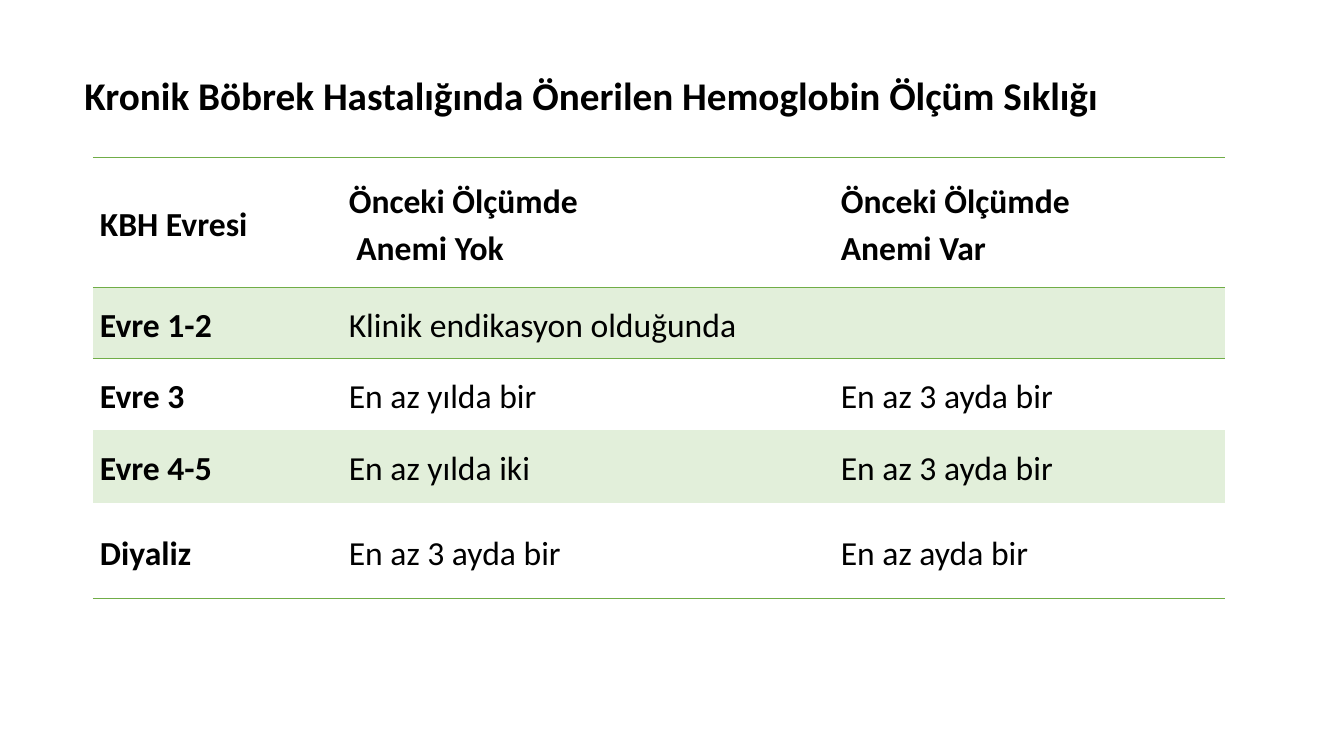
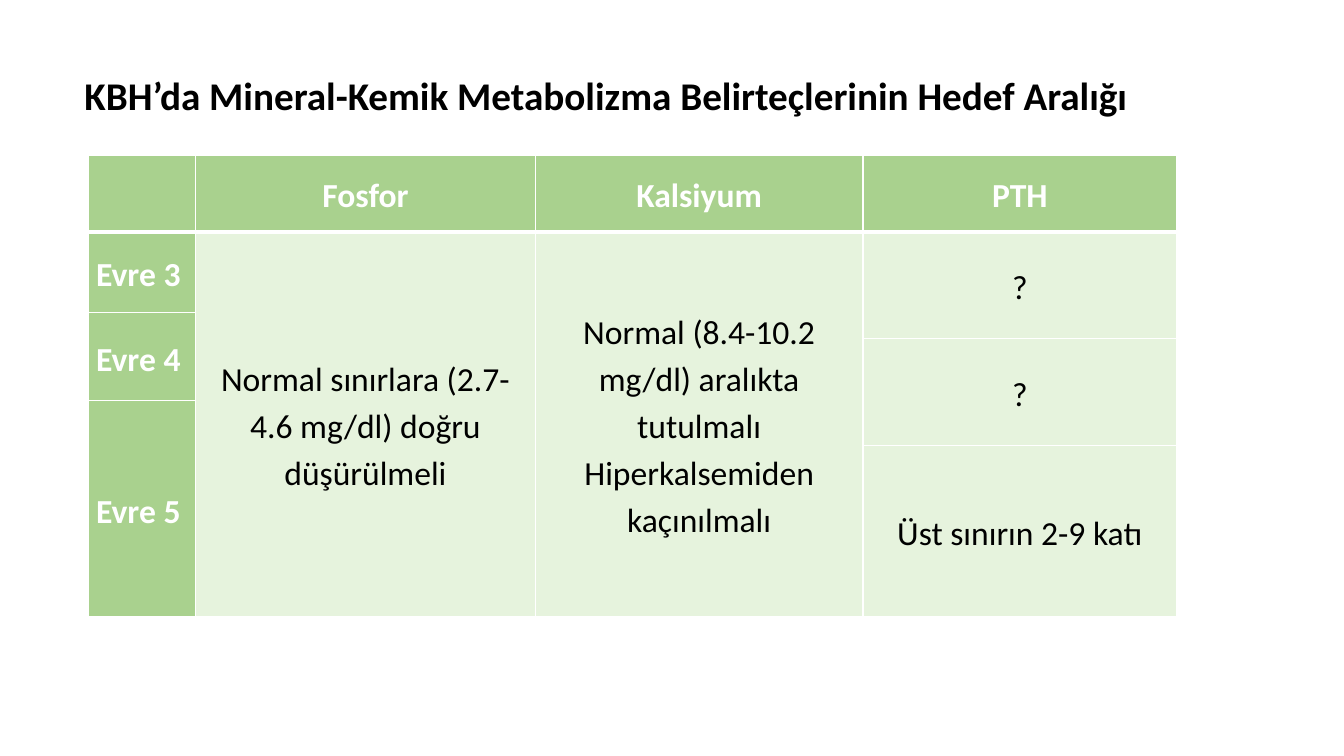
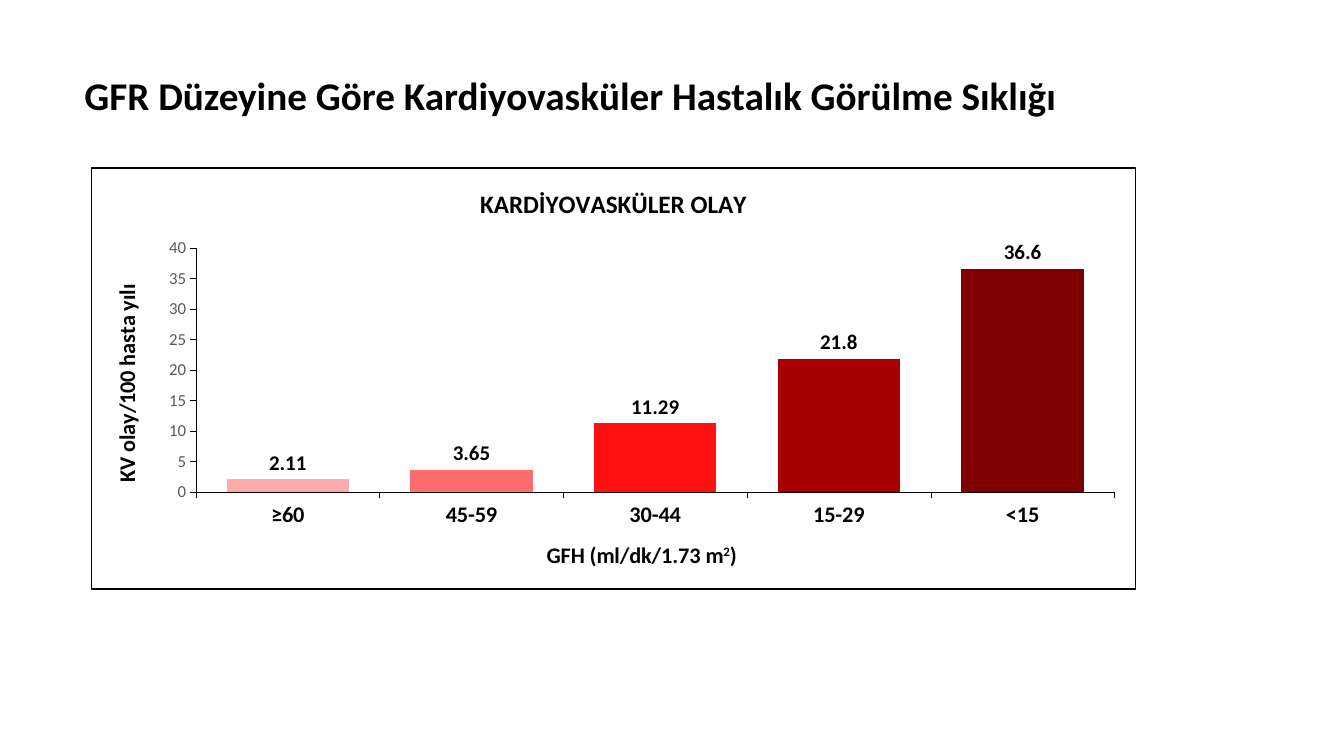
from dataclasses import dataclass
from typing import Any

import pptx
import pptx.chart.data
import pptx.dml.color
import pptx.enum.chart
import pptx.enum.text
import pptx.oxml
import pptx.oxml.ns
import pptx.util
from pptx.util import Cm, Pt

FONT = "Calibri"
COLOURS = {
    "black": "000000",
    "white": "FFFFFF",
    "grey": "595959",
    "line green": "70AD47",
    "band green": "E2EFDA",
    "header green": "A9D18E",
    "body green": "E6F3DD",
}
BAR_COLOURS = ("FFABAB", "FF6D6D", "FF1111", "A80000", "7E0000")
PLAIN_TABLE_STYLE = "{2D5ABB26-0587-4C30-8999-92F81FD0307C}"
CELL_FORMAT = {
    "margin_left": Cm(0.18),
    "margin_right": Cm(0.18),
    "margin_top": 0,
    "margin_bottom": 0,
    "vertical_anchor": pptx.enum.text.MSO_ANCHOR.MIDDLE,
}
ALIGN = pptx.enum.text.PP_ALIGN
Borders = dict[str, tuple[str, float]]


@dataclass(frozen=True)
class Look:
    fill: str | None = None
    colour: str = "black"
    bold: bool = False
    align: Any = ALIGN.JUSTIFY


@dataclass(frozen=True)
class Entry:
    """A table cell; a line break in the text starts a new paragraph."""
    row: int
    column: int
    text: str
    look: Look
    row_span: int = 1


def rgb(name: str) -> pptx.dml.color.RGBColor:
    return pptx.dml.color.RGBColor.from_string(COLOURS.get(name, name))


def set_values(target: Any, values: dict[str, Any]) -> None:
    for name, value in values.items():
        setattr(target, name, value)


def set_font(font: Any, size: float, bold: bool = True, colour: str = "black") -> None:
    set_values(font, {"name": FONT, "size": Pt(size), "bold": bold})
    font.color.rgb = rgb(colour)


def add_titled_page(deck: Any, title: str) -> Any:
    page = deck.slides.add_slide(deck.slide_layouts[6])
    box = page.shapes.add_textbox(Cm(1.88), Cm(1.67), Cm(28), Cm(1.45))
    set_values(box.text_frame, {
        "word_wrap": True,
        "auto_size": pptx.enum.text.MSO_AUTO_SIZE.SHAPE_TO_FIT_TEXT,
    })
    span = box.text_frame.paragraphs[0].add_run()
    span.text = title
    set_font(span.font, 28)
    return page


def add_plain_table(page: Any, left: float, top: float,
                    widths: list[float], heights: list[float]) -> Any:
    """Add a table without style, its lengths given in centimetres."""
    table = page.shapes.add_table(len(heights), len(widths), Cm(left), Cm(top),
                                  Cm(sum(widths)), Cm(sum(heights))).table
    properties = table._tbl.tblPr
    properties.find(pptx.oxml.ns.qn("a:tableStyleId")).text = PLAIN_TABLE_STYLE
    set_values(table, {"first_row": False, "horz_banding": False})
    for column, width in zip(table.columns, widths):
        column.width = Cm(width)
    for row, height in zip(table.rows, heights):
        row.height = Cm(height)
    for cell in table.iter_cells():
        set_values(cell, CELL_FORMAT)
    return table


def set_borders(cell: Any, borders: Borders) -> None:
    """Draw cell sides, keyed L, R, T and B, ahead of the fill."""
    properties = cell._tc.get_or_add_tcPr()
    sides = [side for side in "LRTB" if side in borders]
    for index, side in enumerate(sides):
        colour, width = borders[side]
        properties.insert(index, pptx.oxml.parse_xml(
            f'<a:ln{side} {pptx.oxml.ns.nsdecls("a")} w="{Pt(width)}"><a:solidFill>'
            f'<a:srgbClr val="{COLOURS[colour]}"/></a:solidFill></a:ln{side}>'))


def fill_cell(table: Any, entry: Entry, borders: Borders) -> None:
    cell = table.cell(entry.row, entry.column)
    look = entry.look
    if entry.row_span > 1:
        cell.merge(table.cell(entry.row + entry.row_span - 1, entry.column))
    if look.fill:
        cell.fill.solid()
        cell.fill.fore_color.rgb = rgb(look.fill)
    else:
        cell.fill.background()
    set_borders(cell, borders)
    if not entry.text:
        return
    for index, line in enumerate(entry.text.split("\n")):
        frame = cell.text_frame
        para = frame.add_paragraph() if index else frame.paragraphs[0]
        set_values(para, {"alignment": look.align, "line_spacing": 1.15})
        span = para.add_run()
        span.text = line
        set_font(span.font, 24, look.bold, look.colour)


def build_hemoglobin_page(deck: Any) -> None:
    page = add_titled_page(deck, "Kronik Böbrek Hastalığında Önerilen Hemoglobin Ölçüm Sıklığı")
    rows = (
        ("KBH Evresi", "Önceki Ölçümde\n Anemi Yok", "Önceki Ölçümde \nAnemi Var"),
        ("Evre 1-2", "Klinik endikasyon olduğunda", ""),
        ("Evre 3", "En az yılda bir", "En az 3 ayda bir"),
        ("Evre 4-5", "En az yılda iki", "En az 3 ayda bir"),
        ("Diyaliz", "En az 3 ayda bir", "En az ayda bir"),
    )
    table = add_plain_table(page, 2.34, 3.96, [6.27, 12.4, 9.86],
                            [3.28, 1.8, 1.8, 1.83, 2.41])
    line = ("line green", 1)
    row_borders = {0: {"T": line, "B": line}, 1: {"T": line}, 4: {"B": line}}
    for row, texts in enumerate(rows):
        for column, text in enumerate(texts):
            look = Look(fill="band green" if row % 2 else None,
                        bold=row == 0 or column == 0)
            fill_cell(table, Entry(row, column, text, look), row_borders.get(row, {}))


def build_mineral_page(deck: Any) -> None:
    page = add_titled_page(deck, "KBH’da Mineral-Kemik Metabolizma Belirteçlerinin Hedef Aralığı")
    header = Look("header green", "white", True, ALIGN.CENTER)
    stage = Look("header green", "white", True, ALIGN.LEFT)
    body = Look("body green", align=ALIGN.CENTER)
    entries = [Entry(0, column, text, header)
               for column, text in enumerate(("", "Fosfor", "Kalsiyum", "PTH"))]
    entries += [
        Entry(1, 0, "Evre 3", stage),
        Entry(2, 0, "Evre 4", stage, 2),
        Entry(4, 0, "Evre 5", stage, 2),
        Entry(1, 1, "Normal sınırlara (2.7-4.6 mg/dl) doğru düşürülmeli", body, 5),
        Entry(1, 2, "Normal (8.4-10.2 mg/dl) aralıkta tutulmalı\n"
                    "Hiperkalsemiden kaçınılmalı", body, 5),
        Entry(1, 3, "?", body, 2),
        Entry(3, 3, "?", body, 2),
        Entry(5, 3, "Üst sınırın 2-9 katı", body),
    ]
    table = add_plain_table(page, 2.24, 3.91, [2.69, 8.56, 8.26, 7.9],
                            [1.93, 2.03, 0.66, 1.57, 1.12, 4.32])
    thin, thick = ("white", 1), ("white", 3)
    for entry in entries:
        fill_cell(table, entry, {
            "L": thin, "R": thin,
            "T": thick if entry.row == 1 else thin,
            "B": thick if entry.row == 0 else thin,
        })


def set_title(owner: Any, text: str, size: float, superscript: str = "", ending: str = "") -> None:
    """Title a chart or an axis, with an optional raised part before the ending."""
    title = owner.chart_title if hasattr(owner, "chart_title") else owner.axis_title
    para = title.text_frame.paragraphs[0]
    for part in filter(None, (text, superscript, ending)):
        span = para.add_run()
        span.text = part
        set_font(span.font, size)
        if part == superscript:
            span._r.get_or_add_rPr().set("baseline", "30000")


def frame_chart(chart: Any) -> None:
    """Outline the chart and fix the inner plot area."""
    names = pptx.oxml.ns.nsdecls("c", "a")
    chart_space = chart.element
    chart_space.find(pptx.oxml.ns.qn("c:chart")).addnext(pptx.oxml.parse_xml(
        f'<c:spPr {names}><a:noFill/><a:ln w="{Pt(1)}"><a:solidFill>'
        f'<a:srgbClr val="{COLOURS["black"]}"/></a:solidFill></a:ln></c:spPr>'))
    plot_area = next(chart_space.iter(pptx.oxml.ns.qn("c:plotArea")))
    for layout in plot_area.findall(pptx.oxml.ns.qn("c:layout")):
        plot_area.remove(layout)
    place = {"x": 0.1, "y": 0.19, "w": 0.88, "h": 0.58}
    modes = "".join(f'<c:{key}Mode val="edge"/>' for key in "xy")
    sizes = "".join(f'<c:{key} val="{value}"/>' for key, value in place.items())
    plot_area.insert(0, pptx.oxml.parse_xml(
        f'<c:layout {names}><c:manualLayout><c:layoutTarget val="inner"/>'
        f'{modes}{sizes}</c:manualLayout></c:layout>'))


def build_cardiovascular_page(deck: Any) -> None:
    page = add_titled_page(deck, "GFR Düzeyine Göre Kardiyovasküler Hastalık Görülme Sıklığı")
    data = pptx.chart.data.CategoryChartData()
    data.categories = ["≥60", "45-59", "30-44", "15-29", "<15"]
    data.add_series("Series 1", (2.11, 3.65, 11.29, 21.8, 36.6))
    chart = page.shapes.add_chart(
        pptx.enum.chart.XL_CHART_TYPE.COLUMN_CLUSTERED,
        Cm(2.29), Cm(4.22), Cm(26.34), Cm(10.64), data).chart
    set_font(chart.font, 10, False)
    chart.has_legend = False
    set_title(chart, "KARDİYOVASKÜLER OLAY", 18)
    chart.chart_title.include_in_layout = False

    category_axis, value_axis = chart.category_axis, chart.value_axis
    set_title(category_axis, "GFH (ml/dk/1.73 m", 16, "2", ")")
    set_title(value_axis, "KV olay/100 hasta yılı", 16)
    set_font(category_axis.tick_labels.font, 16)
    set_font(value_axis.tick_labels.font, 12, False, "grey")
    for axis in (category_axis, value_axis):
        set_values(axis, {
            "has_major_gridlines": False,
            "major_tick_mark": pptx.enum.chart.XL_TICK_MARK.OUTSIDE,
        })
        axis.format.line.width = Pt(0.25)
        axis.format.line.color.rgb = rgb("black")
    set_values(value_axis, {"minimum_scale": 0, "maximum_scale": 40, "major_unit": 5})

    plot = chart.plots[0]
    set_values(plot, {"gap_width": 50, "overlap": -27, "vary_by_categories": False,
                      "has_data_labels": True})
    set_values(plot.data_labels, {
        "show_value": True,
        "position": pptx.enum.chart.XL_LABEL_POSITION.OUTSIDE_END,
    })
    set_font(plot.data_labels.font, 15)
    for index, colour in enumerate(BAR_COLOURS):
        fill = plot.series[0].points[index].format.fill
        fill.solid()
        fill.fore_color.rgb = rgb(colour)
    frame_chart(chart)


def main() -> None:
    deck = pptx.Presentation()
    set_values(deck, {"slide_width": Cm(33.87), "slide_height": Cm(19.05)})
    build_hemoglobin_page(deck)
    build_mineral_page(deck)
    build_cardiovascular_page(deck)
    deck.save("out.pptx")


if __name__ == "__main__":
    main()
